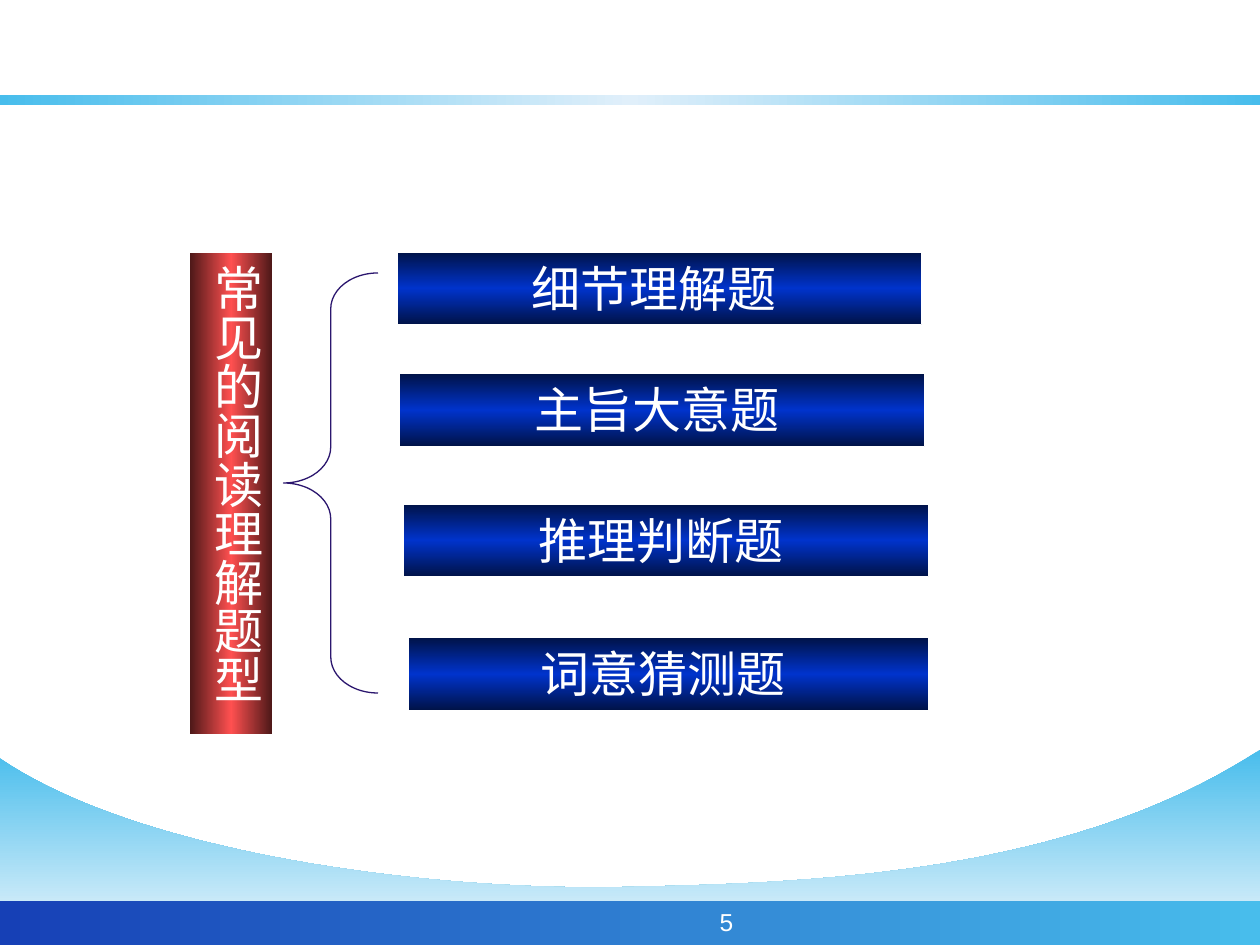
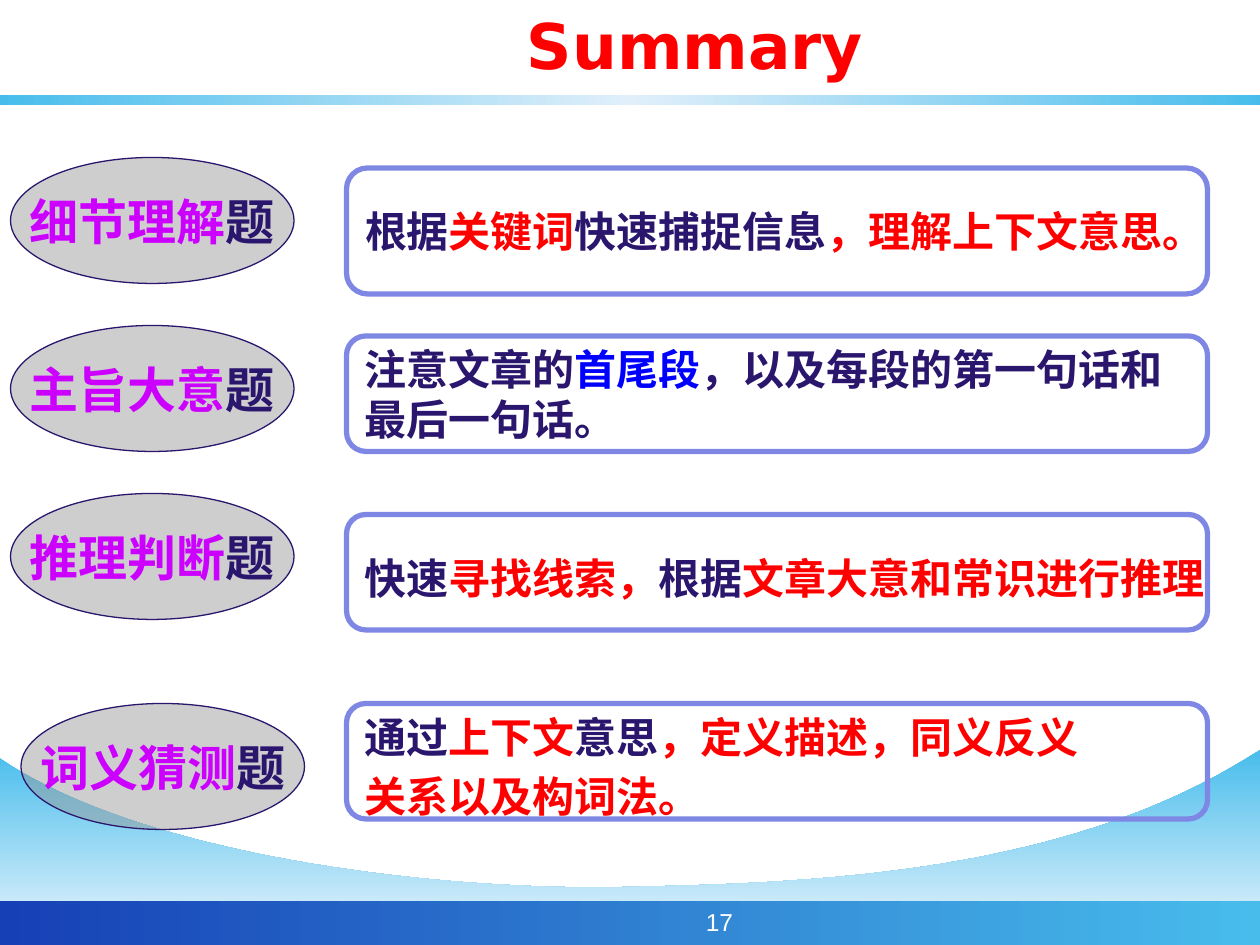
from collections import namedtuple
from dataclasses import dataclass

import pptx
import pptx.dml.color
import pptx.enum.shapes
import pptx.enum.text
import pptx.oxml
import pptx.oxml.ns
import pptx.util
from lxml import etree

Pt = pptx.util.Pt
RGB = pptx.dml.color.RGBColor.from_string
MSO = pptx.enum.shapes.MSO_SHAPE
ALIGN = pptx.enum.text.PP_ALIGN
ANCHOR = pptx.enum.text.MSO_ANCHOR
qn = pptx.oxml.ns.qn

Box = namedtuple("Box", "x y w h")
Run = namedtuple("Run", "text color")


@dataclass(frozen=True)
class Theme:
    white: str = "FFFFFF"
    ink: str = "2B166E"
    red: str = "FF0000"
    blue: str = "0000FF"
    purple: str = "CC00FF"
    gray: str = "969696"
    frame: str = "7E88E4"
    wave: tuple = ("48BDEC", "EEF6FC")
    footer: tuple = ("1640B6", "48BDEC")
    rule: tuple = ("48BDEC", "E0EFFA", "48BDEC")
    red_bar: tuple = ("491717", "FF5050", "491717")
    blue_bar: tuple = ("001247", "0033CC", "001247")
    title_size: int = 36
    label_size: int = 28
    body_size: int = 24
    number_size: int = 14
    latin: str = "DejaVu Sans"
    cjk: str = "Noto Sans CJK SC"
    cjk_vertical: str = "Noto Sans CJK KR"
    number_font: str = "Arial"


T = Theme()
PAGE = Box(0, 0, 720, 540)


def set_gradient(sp, colors, angle):
    sp.fill.gradient()
    grad = sp._element.spPr.find(qn("a:gradFill"))
    for child in list(grad):
        grad.remove(child)
    stops = etree.SubElement(grad, qn("a:gsLst"))
    for i, color in enumerate(colors):
        pos = 100000 * i // (len(colors) - 1)
        gs = etree.SubElement(stops, qn("a:gs"), pos=str(pos))
        etree.SubElement(gs, qn("a:srgbClr"), val=color)
    etree.SubElement(grad, qn("a:lin"), ang=str(angle * 60000), scaled="0")


def set_line(sp, color, width=0.75):
    if color is None:
        sp.line.fill.background()
    else:
        sp.line.color.rgb = RGB(color)
        sp.line.width = Pt(width)


def add_shape(s, kind, box, line=None, width=0.75):
    sp = s.shapes.add_shape(kind, *map(Pt, box))
    sp.shadow.inherit = False
    sp.fill.background()
    set_line(sp, line, width)
    return sp


def add_band(s, box, colors, angle, line=None):
    sp = add_shape(s, MSO.RECTANGLE, box, line)
    set_gradient(sp, colors, angle)
    return sp


def write(sp, paragraphs, size, font, align=ALIGN.LEFT, anchor=ANCHOR.TOP,
          wrap=True, bold=False, ea=T.cjk):
    tf = sp.text_frame
    tf.word_wrap = wrap
    tf.vertical_anchor = anchor
    for i, runs in enumerate(paragraphs):
        p = tf.add_paragraph() if i else tf.paragraphs[0]
        p.alignment = align
        if i:
            p.space_before = Pt(5)
        for run in runs:
            r = p.add_run()
            r.text = run.text
            r.font.size = Pt(size)
            r.font.bold = bold
            r.font.name = font
            r.font.color.rgb = RGB(run.color)
            etree.SubElement(r._r.get_or_add_rPr(), qn("a:ea"), typeface=ea)
    return tf


def bezier(start, c1, c2, end, steps=40):
    for i in range(1, steps + 1):
        t = i / steps
        u = 1 - t
        yield tuple(u**3 * a + 3 * u * u * t * b + 3 * u * t * t * c + t**3 * d
                    for a, b, c, d in zip(start, c1, c2, end))


def add_wave(s, box):
    right, middle, left = (box.w, 0), (354, 78.5), (0, 5)
    points = [right,
              *bezier(right, (611, 72), (462, 76.3), middle),
              *bezier(middle, (246, 80.6), (80, 59.8), left),
              (0, box.h)]
    fb = s.shapes.build_freeform(Pt(box.w), Pt(box.h))
    fb.add_line_segments([(Pt(x), Pt(y)) for x, y in points], close=True)
    sp = fb.convert_to_shape(Pt(box.x), Pt(box.y))
    sp.shadow.inherit = False
    set_line(sp, None)
    set_gradient(sp, T.wave, 90)


def add_frame(s, page, number):
    add_wave(s, Box(page.x, page.y + 428.4, page.w, 111.6))
    add_band(s, Box(page.x, page.y + 514.8, page.w, 25.2), T.footer, 0)
    add_band(s, Box(page.x, page.y + 54.5, page.w, 5.5), T.rule, 0)
    sp = s.shapes.add_textbox(*map(Pt, (page.x + 258, page.y + 514.8, 168, 25.2)))
    write(sp, [[Run(str(number), T.white)]], T.number_size, T.number_font,
          ALIGN.RIGHT)


def add_question_types(s, box):
    spine = add_band(s, Box(box.x, box.y, 48, box.h), T.red_bar, 0, T.white)
    tf = write(spine, [[Run("常见的阅读理解题型", T.white)]], T.label_size,
               T.cjk_vertical, ALIGN.CENTER, ea=T.cjk_vertical)
    tf._txBody.bodyPr.set("vert", "eaVert")

    brace = add_shape(s, MSO.LEFT_BRACE,
                      Box(box.x + 54, box.y + 12, 54, 240), T.ink)
    brace.adjustments[0] = 0.38
    brace.adjustments[1] = 0.5

    bars = [
        ("细节理解题 ", 118.8, 0, 300),
        ("主旨大意题 ", 120.4, 69.6, 300),
        ("推理判断题 ", 122.7, 144, 300),
        ("词意猜测题 ", 125.5, 220.4, 297),
    ]
    for text, dx, dy, width in bars:
        sp = add_band(s, Box(box.x + dx, box.y + dy, width, 41.6),
                      T.blue_bar, 90, T.white)
        write(sp, [[Run(text, T.white)]], T.label_size, T.cjk, ALIGN.CENTER)


def add_title(s, box, text):
    sp = s.shapes.add_textbox(*map(Pt, box))
    write(sp, [[Run(text, T.red)]], T.title_size, T.latin, bold=True)


def add_type_label(s, box, kind):
    sp = add_shape(s, MSO.OVAL, box, T.ink)
    sp.fill.solid()
    sp.fill.fore_color.rgb = RGB(T.gray)
    color = sp._element.spPr.find(qn("a:solidFill"))[0]
    etree.SubElement(color, qn("a:alpha"), val="46000")
    write(sp, [[Run(kind, T.purple), Run("题", T.ink)]], T.label_size, T.latin,
          ALIGN.CENTER, ANCHOR.MIDDLE, wrap=False, bold=True)


def add_advice(s, box, paragraphs, wrap, drop):
    sp = add_shape(s, MSO.FLOWCHART_ALTERNATE_PROCESS, box, T.frame, 3)
    tf = write(sp, paragraphs, T.body_size, T.latin, anchor=ANCHOR.MIDDLE,
               wrap=wrap, bold=True)
    tf.margin_top = Pt(3.6 + 2 * drop)


def add_summary(s, box):
    rows = [
        ("细节理解", 0, 0, 6, 72, False, 0, [
            [Run("根据", T.ink), Run("关键词", T.red),
             Run("快速捕捉信息", T.ink), Run("，理解上下文意思。", T.red)]]),
        ("主旨大意", 0, 96, 102, 66, True, 0, [
            [Run("注意文章的", T.ink), Run("首尾段", T.blue),
             Run("，以及每段的第一句话和最后一句话。", T.ink)]]),
        ("推理判断", 0, 192, 204, 66, False, 3, [
            [Run("快速", T.ink), Run("寻找线索，", T.red), Run("根据", T.ink),
             Run("文章大意和常识进行推理", T.red)]]),
        ("词义猜测", 6, 312, 312, 66, False, 3, [
            [Run("通过", T.ink), Run("上下文", T.red), Run("意思", T.ink),
             Run("，定义描述，同义反义", T.red)],
            [Run("关系以及构词法。", T.red)]]),
    ]
    for kind, dx, label_y, advice_y, height, wrap, drop, paragraphs in rows:
        add_type_label(s, Box(box.x + dx, box.y + label_y, 162, 72), kind)
        add_advice(s, Box(box.x + 192, box.y + advice_y, box.w - 192, height),
                   paragraphs, wrap, drop)


def types_slide(s):
    add_frame(s, PAGE, 5)
    add_question_types(s, Box(108, 144, 423, 276))


def summary_slide(s):
    add_frame(s, PAGE, 17)
    add_title(s, Box(294, 0, 288, 51), "Summary")
    add_summary(s, Box(6, 90, 684, 384))


def main():
    prs = pptx.Presentation()
    prs.slide_width, prs.slide_height = Pt(PAGE.w), Pt(PAGE.h)
    for build in (types_slide, summary_slide):
        build(prs.slides.add_slide(prs.slide_layouts[6]))
    prs.save("out.pptx")


if __name__ == "__main__":
    main()
